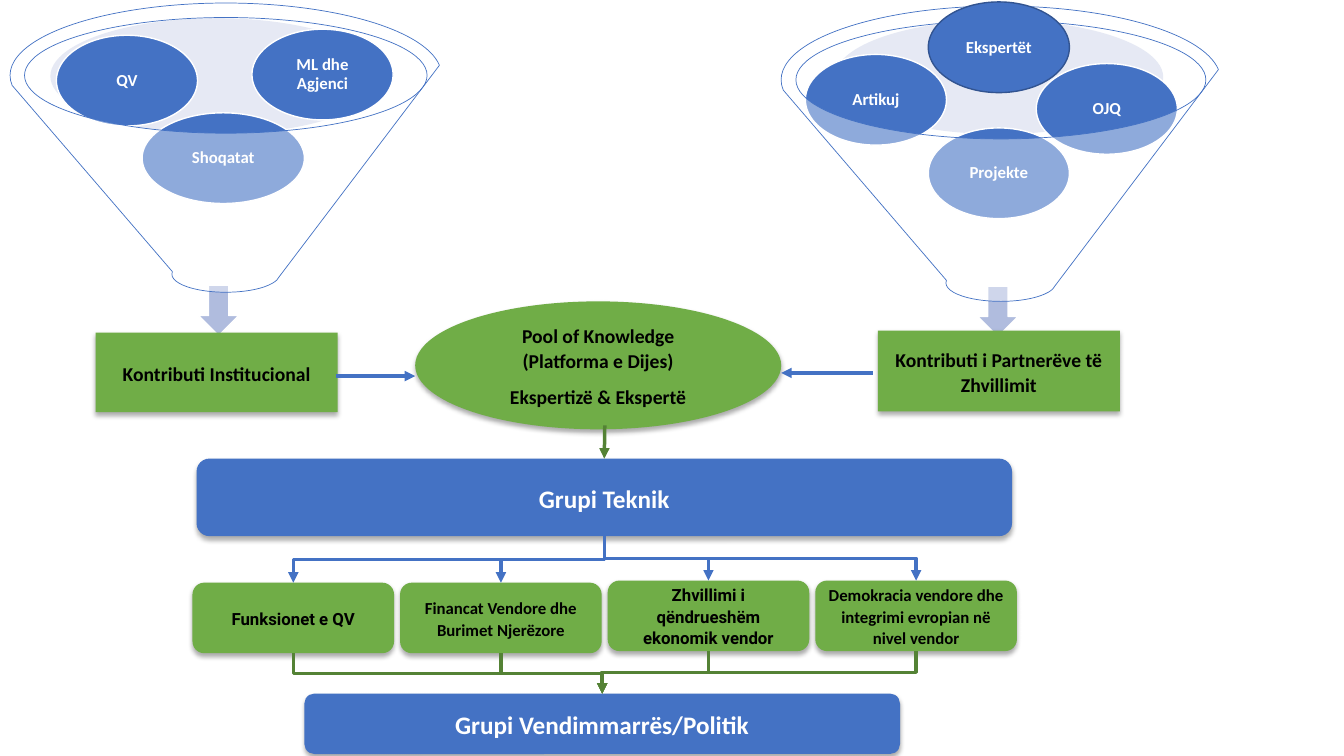
from lxml.etree import SubElement
from pptx import Presentation
from pptx.dml.color import RGBColor
from pptx.enum.shapes import MSO_CONNECTOR, MSO_SHAPE
from pptx.enum.text import MSO_ANCHOR, PP_ALIGN
from pptx.oxml.ns import qn
from pptx.util import Pt

COLORS = {
    "blue": "4472C4",
    "navy": "325491",
    "green": "70AD47",
    "forest": "548235",
    "rim": "C1C9E4",
    "arrow": "B0BCDE",
    "white": "FFFFFF",
    "black": "000000",
}


class Diagram:
    def __init__(self, slide):
        self.slide = slide

    def color(self, name):
        return RGBColor.from_string(COLORS[name])

    def shape(self, kind, box, fill, line=None, line_width=1, alpha=None):
        shape = self.slide.shapes.add_shape(kind, *[Pt(length) for length in box])
        shape.shadow.inherit = False
        shape.fill.solid()
        shape.fill.fore_color.rgb = self.color(fill)
        if alpha:
            solid_color = shape.element.spPr.find(qn("a:solidFill"))[0]
            SubElement(solid_color, qn("a:alpha"), val=str(alpha * 1000))
        if line:
            shape.line.color.rgb = self.color(line)
            shape.line.width = Pt(line_width)
        else:
            shape.line.fill.background()
        return shape

    def shadow(self, shape):
        effects = shape.element.spPr.find(qn("a:effectLst"))
        outer = SubElement(effects, qn("a:outerShdw"), blurRad=str(Pt(3.5)),
                           dist=str(Pt(2.2)), dir="5400000", algn="ctr", rotWithShape="0")
        tint = SubElement(outer, qn("a:srgbClr"), val=COLORS["black"])
        SubElement(tint, qn("a:alpha"), val="32000")

    def text(self, shape, paragraphs, size, color, font="Calibri",
             margins=(7.2, 3.6), spacing=1.07, after=8):
        frame = shape.text_frame
        frame.word_wrap = True
        frame.vertical_anchor = MSO_ANCHOR.MIDDLE
        frame.margin_left = frame.margin_right = Pt(margins[0])
        frame.margin_top = frame.margin_bottom = Pt(margins[1])
        for index, words in enumerate(paragraphs):
            paragraph = frame.add_paragraph() if index else frame.paragraphs[0]
            paragraph.alignment = PP_ALIGN.CENTER
            paragraph.line_spacing = spacing
            paragraph.space_after = Pt(after)
            run = paragraph.add_run()
            run.text = words
            run.font.name = font
            run.font.size = Pt(size)
            run.font.bold = True
            run.font.color.rgb = self.color(color)

    def box(self, kind, box, fill, paragraphs, size, color, **text_style):
        shape = self.shape(kind, box, fill)
        self.shadow(shape)
        self.text(shape, paragraphs, size, color, **text_style)
        return shape

    def ball(self, words, left, top, width=100.8, line="white", after=4, spacing=0.9):
        shape = self.shape(MSO_SHAPE.OVAL, (left, top, width, 64.8), "blue", line)
        self.text(shape, [words], 12, "white", margins=(1.3, 1.3), spacing=spacing, after=after)

    def funnel(self, rim, arrow, label_box, label, balls, outline):
        self.shape(MSO_SHAPE.OVAL, rim, "rim", alpha=40)
        self.shape(MSO_SHAPE.DOWN_ARROW, (*arrow, 28.8, 36), "arrow", "white")
        self.box(MSO_SHAPE.RECTANGLE, label_box, "green", [label], 14, "black", margins=(8, 8))
        for ball in balls:
            self.ball(*ball)
        self.shape(MSO_SHAPE.FUNNEL, outline, "white", "blue", 0.5, alpha=40)

    def style_connector(self, connector, color):
        connector.line.color.rgb = self.color(color)
        connector.line.width = Pt(2.5)
        properties = connector.element.spPr
        SubElement(properties.find(qn("a:ln")), qn("a:tailEnd"), type="triangle")
        SubElement(properties, qn("a:effectLst"))

    def arrow(self, start, end, color):
        connector = self.slide.shapes.add_connector(
            MSO_CONNECTOR.STRAIGHT, *[Pt(length) for length in (*start, *end)])
        self.style_connector(connector, color)
        return connector

    def elbow(self, upper, lower, color):
        start_x, start_y = upper.left + upper.width // 2, upper.top + upper.height
        end_x, end_y = lower.left + lower.width // 2, lower.top
        connector = self.slide.shapes.add_connector(
            MSO_CONNECTOR.ELBOW, start_x, start_y, end_x, end_y)
        connector.begin_connect(upper, 2)
        connector.end_connect(lower, 0)
        width, height = end_y - start_y, abs(end_x - start_x)
        connector.left = (start_x + end_x - width) // 2
        connector.top = (start_y + end_y - height) // 2
        connector.width, connector.height = width, height
        rightward = end_x > start_x
        transform = connector.element.spPr.find(qn("a:xfrm"))
        transform.set("rot", "16200000" if rightward else "5400000")
        transform.set("flipH", "1" if rightward else "0")
        transform.set("flipV", "0")
        self.style_connector(connector, color)


def main():
    presentation = Presentation()
    presentation.slide_width, presentation.slide_height = Pt(960), Pt(540)
    diagram = Diagram(presentation.slides.add_slide(presentation.slide_layouts[6]))

    technical = diagram.box(MSO_SHAPE.ROUNDED_RECTANGLE, (140.4, 327.6, 582.5, 55.4),
                            "blue", ["Grupi Teknik"], 18, "white")
    decision = diagram.box(MSO_SHAPE.ROUNDED_RECTANGLE, (217.4, 495.4, 425.5, 43.2),
                           "blue", ["Grupi Vendimmarrës/Politik"], 18, "white")
    diagram.box(MSO_SHAPE.OVAL, (296.6, 215.3, 261.4, 91.4), "green",
                ["Pool of Knowledge (Platforma e Dijes)", "Ekspertizë & Ekspertë"], 14, "black")

    diagram.funnel(
        (596.2, 14.4, 234.7, 81.4), (698.4, 204.5), (627.1, 236.2, 172.8, 57.6),
        "Kontributi i Partnerëve të Zhvillimit",
        [("Projekte", 663.1, 91.4), ("Artikuj", 575.3, 38.9), ("OJQ", 740.2, 45.4)],
        (558, 4.3, 313.9, 211))
    diagram.funnel(
        (36, 13, 237.6, 82.8), (141.8, 203.8), (68.4, 237.6, 172.8, 56.9),
        "Kontributi Institucional",
        [("Shoqatat", 101.5, 80.6, 115.9), ("QV", 40.3, 25.2), ("ML dhe Agjenci", 180, 20.9)],
        (7.2, 2.2, 308.2, 206.6))

    diagram.arrow((239.8, 268.6), (296.6, 268.6), "blue")
    diagram.arrow((623.5, 266.4), (558, 266.4), "blue")
    diagram.arrow((432, 303.8), (431.6, 327.6), "forest").end_connect(technical, 0)

    topics = [
        ("Funksionet e QV", "Roboto", 416.2),
        ("Financat Vendore dhe Burimet Njerëzore", "Calibri", 416.2),
        ("Zhvillimi i qëndrueshëm ekonomik vendor", "Roboto", 414.7),
        ("Demokracia vendore dhe integrimi evropian në nivel vendor", "Calibri", 414.7),
    ]
    for index, (words, font, top) in enumerate(topics):
        topic = diagram.box(MSO_SHAPE.ROUNDED_RECTANGLE, (137.5 + 148.3 * index, top, 144, 50.4),
                            "green", [words], 12, "black", font=font)
        diagram.elbow(technical, topic, "blue")
        diagram.elbow(topic, decision, "forest")

    diagram.ball("Ekspertët", 663.1, 1.4, line="navy", after=0, spacing=1)
    presentation.save("out.pptx")


if __name__ == "__main__":
    main()
